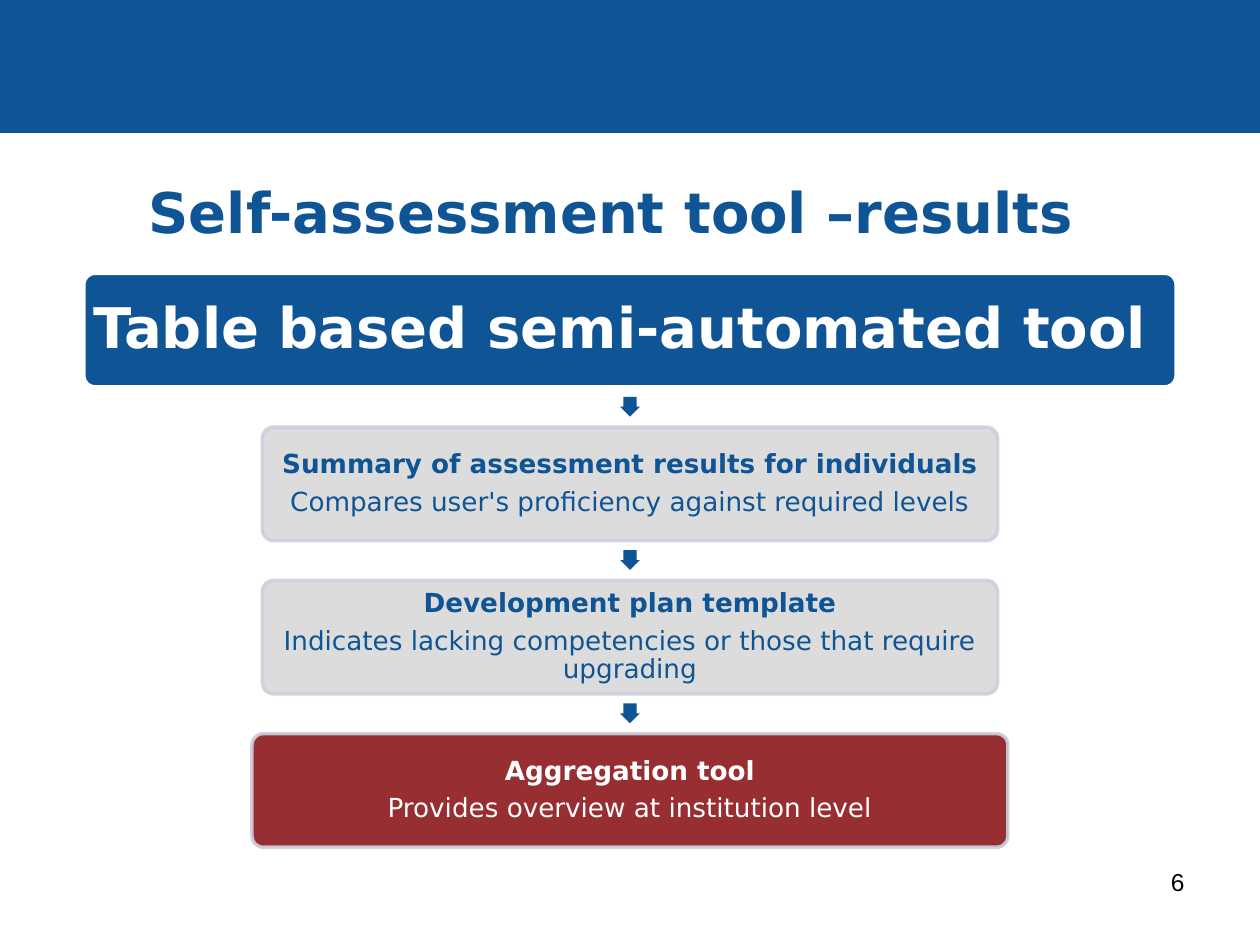
from dataclasses import dataclass

from pptx import Presentation
from pptx.dml.color import RGBColor
from pptx.enum.shapes import MSO_SHAPE
from pptx.enum.text import MSO_ANCHOR, PP_ALIGN
from pptx.oxml.ns import qn
from pptx.util import Cm, Pt
from lxml import etree

RECT = MSO_SHAPE.RECTANGLE
ROUND = MSO_SHAPE.ROUNDED_RECTANGLE
ARROW = MSO_SHAPE.DOWN_ARROW
MIDDLE = MSO_ANCHOR.MIDDLE
CENTER, RIGHT = PP_ALIGN.CENTER, PP_ALIGN.RIGHT


@dataclass(frozen=True)
class Theme:
    blue: str = "0F5494"
    white: str = "FFFFFF"
    grey: str = "D9D9D9"
    red: str = "8C181B"
    edge: str = "CECEDE"
    black: str = "000000"
    face: str = "DejaVu Sans"
    plain: str = "Arial"
    big: int = 32
    small: int = 15
    page: int = 14


@dataclass(frozen=True)
class Step:
    head: str
    note: str
    width: float
    fill: str
    ink: str


THEME = Theme()
STEPS = [
    Step("Summary of assessment results for individuals",
         "Compares user's proficiency against required levels",
         14.82, THEME.grey, THEME.blue),
    Step("Development plan template",
         "Indicates lacking competencies or those that require upgrading",
         14.82, THEME.grey, THEME.blue),
    Step("Aggregation tool", "Provides overview at institution level",
         15.24, THEME.red, THEME.white),
]
WIDTH, HEIGHT = 25.4, 19.05
MID = WIDTH / 2
TALL = 2.29
FIRST, PITCH = 8.61, 3.09
TIP, RISE = 0.4, 0.61


def style(para, size: int, ink: str, bold: bool = False,
          face: str = THEME.face, align=CENTER) -> None:
    para.alignment = align
    font = para.font
    font.name, font.size, font.bold = face, Pt(size), bold
    font.color.rgb = RGBColor.from_string(ink)


def fade(fill, share: int) -> None:
    """Set the opacity of a solid fill, in percent."""
    color = fill._xPr.find(qn("a:solidFill"))[0]
    etree.SubElement(color, qn("a:alpha")).set("val", str(share * 1000))


def block(slide, kind, left: float, top: float, width: float, height: float,
          fill: str, edge: str | None = None, weight: float = 2):
    shape = slide.shapes.add_shape(
        kind, Cm(left), Cm(top), Cm(width), Cm(height))
    shape.shadow.inherit = False
    shape.fill.solid()
    shape.fill.fore_color.rgb = RGBColor.from_string(fill)
    if edge:
        shape.line.color.rgb = RGBColor.from_string(edge)
        shape.line.width = Pt(weight)
    else:
        shape.line.fill.background()
    return shape


def panel(slide, top: float, width: float, fill: str, edge: str, ink: str,
          size: int, inset: float, lines: list[str]):
    """Draw a centred rounded box whose first line is bold."""
    shape = block(slide, ROUND, MID - width / 2, top, width, TALL, fill, edge)
    shape.adjustments[0] = 0.1
    frame = shape.text_frame
    frame.word_wrap = True
    frame.vertical_anchor = MIDDLE
    frame.margin_left = frame.margin_right = Cm(inset)
    frame.margin_top = frame.margin_bottom = Cm(inset)
    for i, text in enumerate(lines):
        para = frame.add_paragraph() if i else frame.paragraphs[0]
        para.text = text
        para.line_spacing = 0.9
        para.space_after = Pt(size * 0.35)
        style(para, size, ink, bold=i == 0)
    return shape


def arrow(slide, top: float) -> None:
    shape = block(slide, ARROW, MID - TIP / 2, top, TIP, TIP, THEME.blue)
    shape.adjustments[0] = 0.67
    shape.adjustments[1] = 0.5


def title(slide, text: str) -> None:
    shape = slide.shapes.title
    shape.left, shape.top = Cm(1.09), Cm(2.97)
    shape.width, shape.height = Cm(22.86), Cm(2.59)
    frame = shape.text_frame
    frame.text = text
    frame.vertical_anchor = MIDDLE
    style(frame.paragraphs[0], THEME.big, THEME.blue, bold=True)


def number(slide, text: str) -> None:
    box = slide.shapes.add_textbox(Cm(18.21), Cm(17.35), Cm(5.92), Cm(1.32))
    frame = box.text_frame
    frame.word_wrap = True
    frame.text = text
    style(frame.paragraphs[0], THEME.page, THEME.black,
          face=THEME.plain, align=RIGHT)


def main() -> None:
    deck = Presentation()
    deck.slide_width, deck.slide_height = Cm(WIDTH), Cm(HEIGHT)
    slide = deck.slides.add_slide(deck.slide_layouts[5])
    block(slide, RECT, 0, 0, WIDTH, 2.67, THEME.blue, THEME.blue, 0.75)
    title(slide, "Self-assessment tool –results ")
    panel(slide, 5.51, 22.02, THEME.blue, THEME.white, THEME.white,
          THEME.big, 0.1, ["Table based semi-automated tool "])
    for i, step in enumerate(STEPS):
        top = FIRST + i * PITCH
        arrow(slide, top - RISE)
        shape = panel(slide, top, step.width, step.fill, THEME.edge, step.ink,
                      THEME.small, 0.05, [step.head, step.note])
        fade(shape.fill, 90)
        fade(shape.line.fill, 90)
    number(slide, "6")
    deck.save("out.pptx")


if __name__ == "__main__":
    main()
